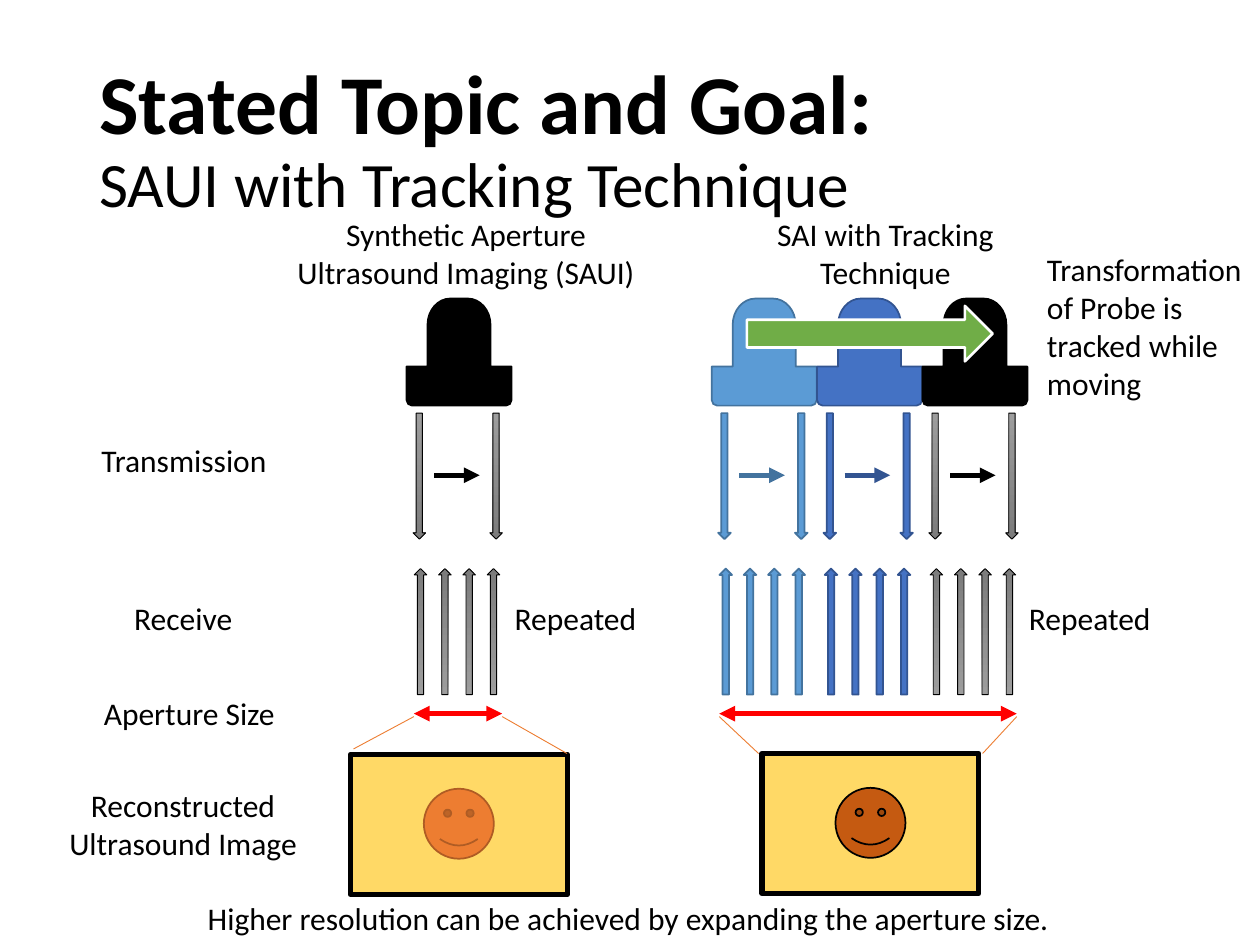
from dataclasses import dataclass

import pptx
import pptx.dml.color
import pptx.enum.shapes
import pptx.enum.text
import pptx.oxml
import pptx.oxml.ns
import pptx.util

Pt = pptx.util.Pt
qn = pptx.oxml.ns.qn
SHAPE = pptx.enum.shapes.MSO_SHAPE
ALIGN = pptx.enum.text.PP_ALIGN
ANCHOR = pptx.enum.text.MSO_ANCHOR
AUTO = pptx.enum.text.MSO_AUTO_SIZE


@dataclass(frozen=True)
class Theme:
    font: str = "Calibri"
    title: float = 47.8
    subtitle: float = 36.1
    body: float = 18
    black: str = "000000"
    white: str = "FFFFFF"
    red: str = "FF0000"
    green: str = "70AD47"
    orange: str = "ED7D31"
    orange_edge: str = "AF5C24"
    dark_orange: str = "C55A11"
    yellow: str = "FFD966"
    gray: tuple = ("9D9D9D", "7C7C7C")


@dataclass(frozen=True)
class Probe:
    body: str
    beam: object  # one colour, or a pair for a gradient
    edge: str
    beam_edge_width: float


T = Theme()
BLACK = Probe(T.black, T.gray, T.black, 0.5)
LIGHT = Probe("5B9BD5", "5B9BD5", "43739E", 1)
BLUE = Probe("4472C4", "4472C4", "325491", 1)


def rgb(color):
    return pptx.dml.color.RGBColor.from_string(color)


def paint(sp, fill, line, width):
    sp.shadow.inherit = False
    if isinstance(fill, tuple):
        sp.fill.gradient()
        sp.fill.gradient_angle = 270
        for stop, color in zip(sp.fill.gradient_stops, fill):
            stop.color.rgb = rgb(color)
    else:
        sp.fill.solid()
        sp.fill.fore_color.rgb = rgb(fill)
    sp.line.color.rgb = rgb(line)
    sp.line.width = Pt(width)


def add_shape(s, kind, x, y, w, h, fill, line, width):
    sp = s.shapes.add_shape(kind, Pt(x), Pt(y), Pt(w), Pt(h))
    paint(sp, fill, line, width)
    return sp


def add_line(s, x1, y1, x2, y2, color, width, *arrow_ends):
    """arrow_ends: any of "headEnd" (start) and "tailEnd" (finish)."""
    sp = s.shapes.add_connector(pptx.enum.shapes.MSO_CONNECTOR.STRAIGHT,
                                Pt(x1), Pt(y1), Pt(x2), Pt(y2))
    sp.line.color.rgb = rgb(color)
    sp.line.width = Pt(width)
    ln = sp.line._get_or_add_ln()
    for end in arrow_ends:
        ln.append(pptx.oxml.parse_xml(
            f'<a:{end} {pptx.oxml.ns.nsdecls("a")} type="triangle"/>'))
    sp._element.spPr.append(
        pptx.oxml.parse_xml(f'<a:effectLst {pptx.oxml.ns.nsdecls("a")}/>'))


def add_text(s, x, y, w, h, *lines, align=ALIGN.LEFT, wrap=False):
    tf = s.shapes.add_textbox(Pt(x), Pt(y), Pt(w), Pt(h)).text_frame
    tf.word_wrap = wrap
    tf.auto_size = AUTO.SHAPE_TO_FIT_TEXT
    tf.text = "\n".join(lines)
    for p in tf.paragraphs:
        p.alignment = align
        p.font.name = T.font
        p.font.size = Pt(T.body)
        p.font.color.rgb = rgb(T.black)


def add_title(s, title, subtitle):
    sp = s.shapes.title
    sp.left, sp.top, sp.width, sp.height = Pt(49.5), Pt(28.8), Pt(620.6), Pt(104.4)
    tf = sp.text_frame
    tf.auto_size = AUTO.NONE
    tf.vertical_anchor = ANCHOR.MIDDLE
    p = tf.paragraphs[0]
    p.alignment = ALIGN.LEFT
    p.line_spacing = 0.9
    p.font.name = T.font
    p.font.color.rgb = rgb(T.black)
    for text, size, bold in ((title, T.title, True), (subtitle, T.subtitle, False)):
        if p.runs:
            p.add_line_break()
        r = p.add_run()
        r.text = text
        r.font.size = Pt(size)
        r.font.bold = bold


def add_outline(s, x, y, start, segments):
    """Each segment is one line end, or the corner and end of a rounded corner."""
    points, curves, at = [], [], start
    for *corner, end in segments:
        if corner:
            curves.append(len(points))
            points += [tuple(a + 0.55 * (c - a) for a, c in zip(side, corner[0]))
                       for side in (at, end)]
        points.append(end)
        at = end
    fb = s.shapes.build_freeform(Pt(x + start[0]), Pt(y + start[1]))
    fb.add_line_segments([(Pt(x + px), Pt(y + py)) for px, py in points], close=True)
    sp = fb.convert_to_shape()

    # Join two control points and an end into one Bezier curve
    lines = list(sp._element.iter(qn("a:lnTo")))
    for i in curves:
        curve = pptx.oxml.parse_xml(f'<a:cubicBezTo {pptx.oxml.ns.nsdecls("a")}/>')
        lines[i].addprevious(curve)
        for line in lines[i:i + 3]:
            curve.append(line[0])
            line.getparent().remove(line)
    return sp


def add_probe(s, x, probe):
    # Head: round-topped neck on a wider base
    head = add_outline(s, x, 170.6, (25, 0), [
        [(35, 0)], [(48, 0), (48, 15)], [(48, 38.9)], [(60, 38.9)],
        [(60, 58)], [(60, 61.2), (56.8, 61.2)],
        [(3.2, 61.2)], [(0, 61.2), (0, 58)],
        [(0, 38.9)], [(12, 38.9)], [(12, 15)], [(12, 0), (25, 0)]])
    paint(head, probe.body, probe.edge, 1)

    # Two transmitted beams with the scan direction between them
    def beam(left, y):
        return add_shape(s, SHAPE.DOWN_ARROW, left, y, 7.2, 72,
                         probe.beam, probe.edge, probe.beam_edge_width)

    for dx in (3.7, 47.6):
        beam(x + dx, 236.1)
    add_line(s, x + 15.8, 271.6, x + 41.8, 271.6, probe.edge, 3, "tailEnd")

    # Four received beams
    for i in range(4):
        beam(x + 4.4 + 13.9 * i, 324.9).rotation = 180


def add_image(s, x, y, face, face_edge):
    add_shape(s, SHAPE.RECTANGLE, x, y, 124, 80, T.yellow, T.black, 3)
    add_shape(s, SHAPE.SMILEY_FACE, x + 42, y + 19.6, 40, 40, face, face_edge, 1)


def main():
    prs = pptx.Presentation()
    prs.slide_width, prs.slide_height = Pt(720), Pt(540)
    s = prs.slides.add_slide(prs.slide_layouts[5])
    add_title(s, "Stated Topic and Goal:", "SAUI with Tracking Technique")

    # Column headings
    add_text(s, 162.3, 119.5, 208, 51, "Synthetic Aperture Ultrasound Imaging (SAUI)",
             align=ALIGN.CENTER, wrap=True)
    add_text(s, 428.5, 119.5, 155, 51, "SAI with Tracking Technique",
             align=ALIGN.CENTER, wrap=True)

    # Row labels
    add_text(s, 50.4, 248.6, 109.4, 29, "Transmission", align=ALIGN.CENTER)
    add_text(s, 69.2, 339, 71, 29, "Receive", align=ALIGN.CENTER)
    add_text(s, 52.3, 393, 113, 29, "Aperture Size")
    add_text(s, 31.6, 445.5, 146, 51, "Reconstructed", "Ultrasound Image",
             align=ALIGN.CENTER)

    # Probes: one fixed, and one moved through three places
    add_probe(s, 232.3, BLACK)
    for i, probe in enumerate((LIGHT, BLUE, BLACK)):
        add_probe(s, 406.7 + 60.2 * i, probe)
    for x in (287, 580.9):
        add_text(s, x, 339, 85, 29, "Repeated")

    # Images, aperture widths and the lines that join them
    add_image(s, 200.2, 431.1, T.orange, T.orange_edge)
    add_image(s, 435.4, 430.6, T.dark_orange, T.black)
    for left, right, image_left, image_right, y in ((236.5, 287, 202, 324, 428),
                                                    (411, 581, 433.5, 561.5, 430.6)):
        add_line(s, left, 407.8, right, 407.8, T.red, 3, "headEnd", "tailEnd")
        add_line(s, left, 409.5, image_left, y, T.orange, 0.5)
        add_line(s, right, 409.5, image_right, 430.6, T.orange, 0.5)

    # Probe movement and conclusion
    add_shape(s, SHAPE.RIGHT_ARROW, 426.8, 174.8, 140.4, 31.7, T.green, T.white, 1.5)
    add_text(s, 591.2, 139.6, 127.5, 94.5,
             "Transformation of Probe is tracked while moving", wrap=True)
    add_text(s, 111.6, 510, 497, 29,
             "Higher resolution can be achieved by expanding the aperture size.")

    prs.save("out.pptx")


if __name__ == "__main__":
    main()
